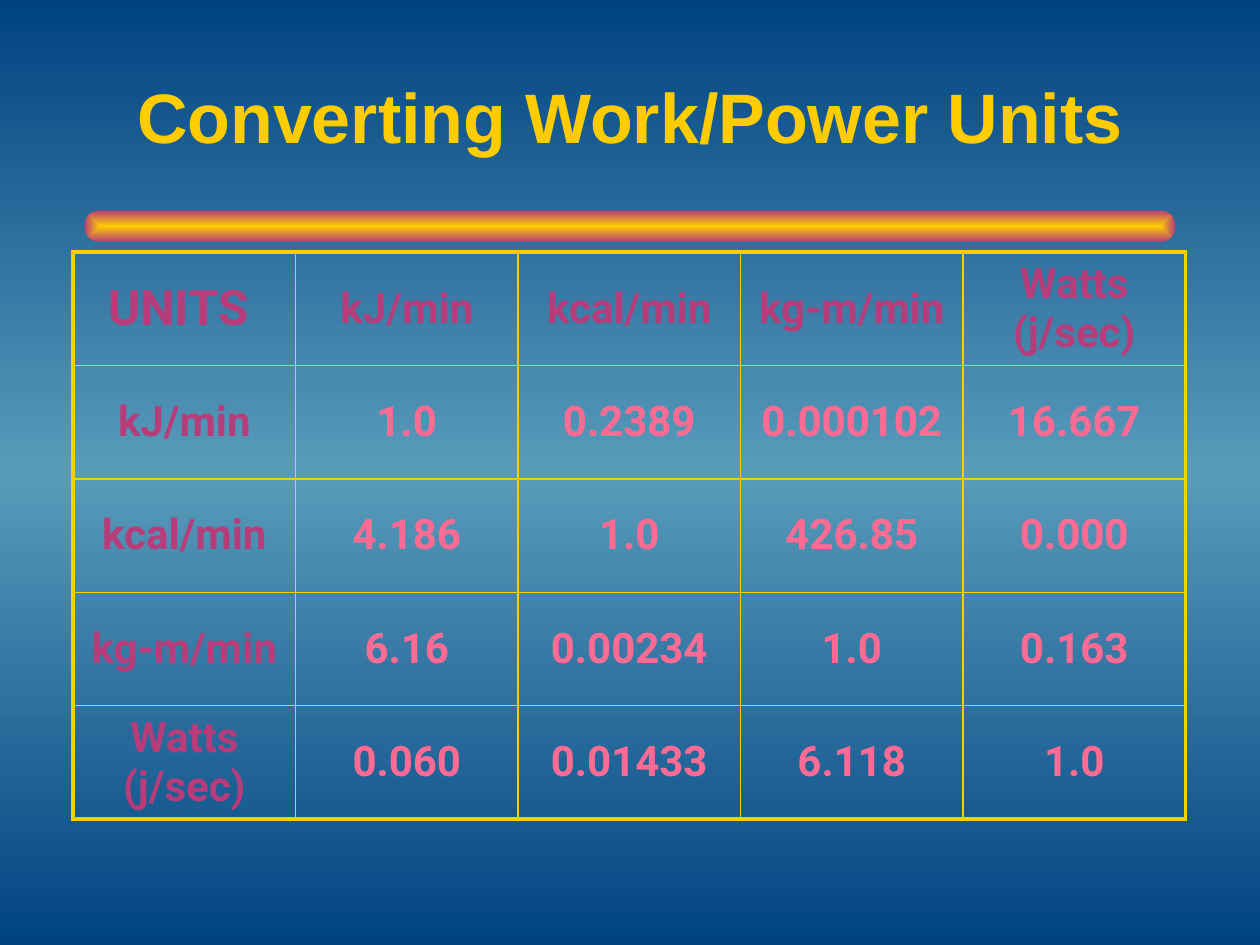
from lxml.etree import SubElement
from pptx import Presentation
from pptx.dml.color import RGBColor
from pptx.enum.shapes import MSO_SHAPE
from pptx.enum.text import MSO_ANCHOR, PP_ALIGN
from pptx.oxml import parse_xml
from pptx.oxml.ns import nsdecls, qn
from pptx.util import Inches, Pt

GOLD = RGBColor(0xFF, 0xCC, 0x00)
PLUM = RGBColor(0xB7, 0x3D, 0x7A)
PINK = RGBColor(0xFF, 0x6B, 0x93)
NAVY = RGBColor(0x00, 0x43, 0x82)
SKY = RGBColor(0x59, 0x9B, 0xBA)

WIDE, HIGH = 10, 7.5
THIN, THICK = 1, 2.25

UNITS = ["kJ/min", "kcal/min", "kg-m/min", "Watts (j/sec)"]
RATES = [
    ["1.0", "0.2389", "0.000102", "16.667"],
    ["4.186", "1.0", "426.85", "0.000"],
    ["6.16", "0.00234", "1.0", "0.163"],
    ["0.060", "0.01433", "6.118", "1.0"],
]
ROWS = [["UNITS "] + UNITS] + [[unit] + row for unit, row in zip(UNITS, RATES)]

LINEAR = '<a:lin ang="5400000" scaled="1"/>'
CENTRED = ('<a:path path="shape">'
           '<a:fillToRect l="50000" t="50000" r="50000" b="50000"/></a:path>')


class Deck:
    """Holds the style and the current slide; boxes are shares of its size."""

    def __init__(self):
        self.prs = Presentation()
        self.prs.slide_width, self.prs.slide_height = Inches(WIDE), Inches(HIGH)
        self.slide = self.prs.slides.add_slide(self.prs.slide_layouts[6])

    def area(self, x, y, w, h):
        return (Inches(x * WIDE), Inches(y * HIGH),
                Inches(w * WIDE), Inches(h * HIGH))

    def blend(self, owner, fill, stops, form):
        """Give a shape or background a gradient of evenly spaced colours."""
        fill.solid()
        fill.fore_color.rgb = stops[0]
        step = 100000 // (len(stops) - 1)
        marks = "".join(
            f'<a:gs pos="{i * step}"><a:srgbClr val="{tone}"/></a:gs>'
            for i, tone in enumerate(stops))
        grad = parse_xml(f'<a:gradFill {nsdecls("a")} rotWithShape="1">'
                         f'<a:gsLst>{marks}</a:gsLst>{form}</a:gradFill>')
        old = owner.xpath(".//a:solidFill")[0]
        old.getparent().replace(old, grad)

    def backdrop(self, stops):
        fill = self.slide.background.fill
        self.blend(self.slide.element.cSld, fill, stops, LINEAR)

    def label(self, para, text, size, font, tone):
        para.alignment = PP_ALIGN.CENTER
        run = para.add_run()
        run.text = text
        run.font.size, run.font.name, run.font.bold = Pt(size), font, True
        run.font.color.rgb = tone

    def title(self, text, *box):
        frame = self.slide.shapes.add_textbox(*self.area(*box)).text_frame
        frame.word_wrap = True
        frame.vertical_anchor = MSO_ANCHOR.MIDDLE
        para = frame.paragraphs[0]
        para.line_spacing = 0.9
        self.label(para, text, 40, "Arial", GOLD)

    def bar(self, stops, *box):
        bar = self.slide.shapes.add_shape(MSO_SHAPE.ROUNDED_RECTANGLE, *self.area(*box))
        bar.adjustments[0] = 0.5
        bar.shadow.inherit = False
        self.blend(bar.element.spPr, bar.fill, stops, CENTRED)
        bar.line.fill.background()

    def edges(self, cell, widths):
        props = cell._tc.get_or_add_tcPr()
        for i, (side, width) in enumerate(zip("LRTB", widths)):
            line = props.makeelement(qn(f"a:ln{side}"), {"w": str(int(Pt(width)))})
            fill = SubElement(line, qn("a:solidFill"))
            SubElement(fill, qn("a:srgbClr"), val=str(GOLD))
            props.insert(i, line)

    def table(self, rows, *box):
        last, end = len(rows) - 1, len(rows[0]) - 1
        table = self.slide.shapes.add_table(last + 1, end + 1, *self.area(*box)).table
        table.first_row = table.horz_banding = False
        for r, row in enumerate(rows):
            for c, text in enumerate(row):
                cell = table.cell(r, c)
                cell.fill.background()
                cell.vertical_anchor = MSO_ANCHOR.MIDDLE
                outer = (c == 0, c == end, r == 0, r == last)
                self.edges(cell, [THICK if out else THIN for out in outer])
                size = 28 if r == c == 0 else 24
                tone = PINK if r and c else PLUM
                self.label(cell.text_frame.paragraphs[0], text, size, "Roboto", tone)


def main():
    deck = Deck()
    deck.backdrop([NAVY, SKY, NAVY])
    # Rule under the heading
    deck.bar([GOLD, PLUM], 0.067, 1.67 / HIGH, 0.866, 0.25 / HIGH)
    # Heading
    deck.title("Converting Work/Power Units", 0.056, 0.33 / HIGH, 0.888, 1.25 / HIGH)
    # Conversion table
    deck.table(ROWS, 0.058, 2 / HIGH, 0.883, 0.6)
    deck.prs.save("out.pptx")


if __name__ == "__main__":
    main()
